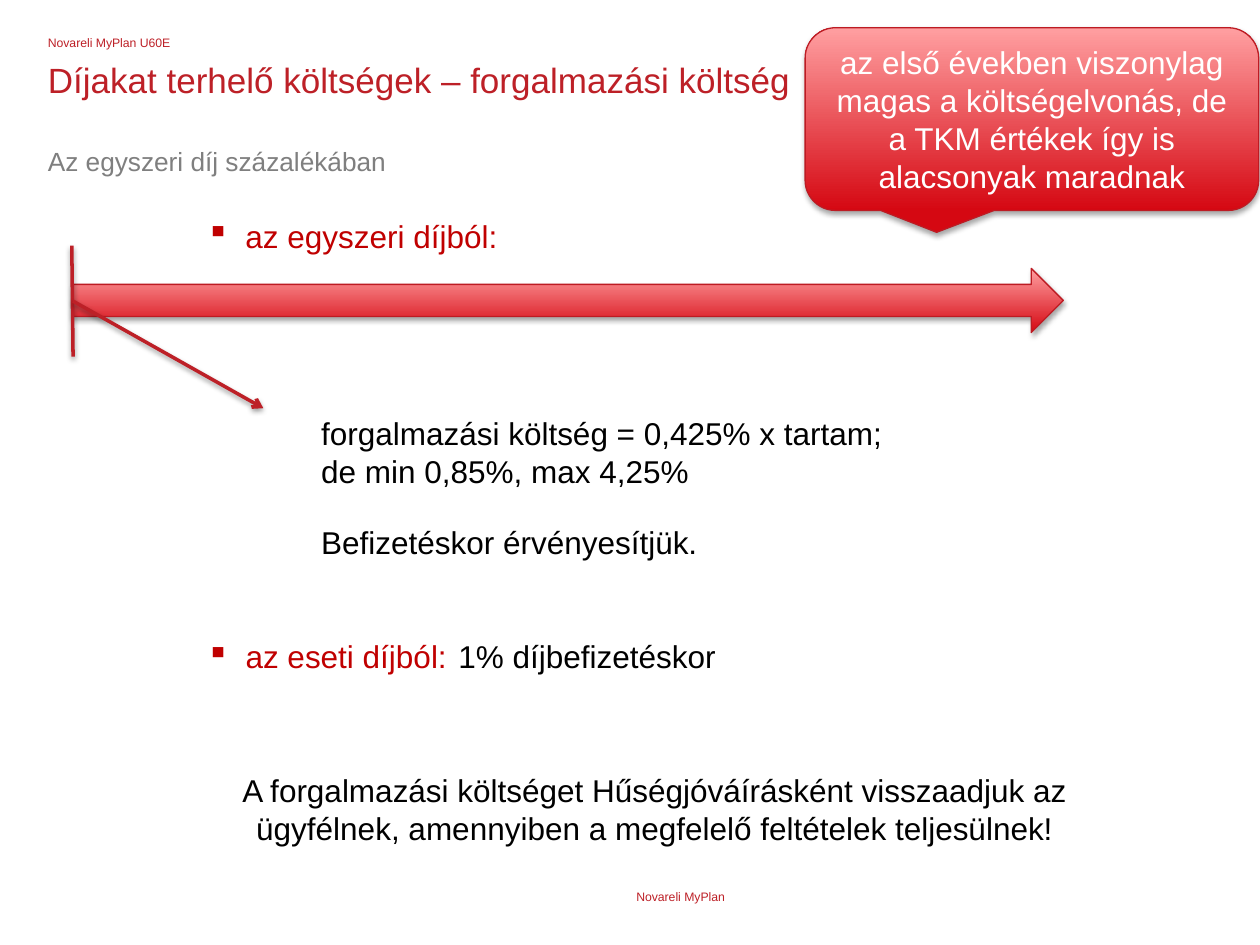
"""Build the slide on distribution costs charged against premiums."""
from dataclasses import dataclass

from lxml import etree
from pptx import Presentation
from pptx.dml.color import RGBColor
from pptx.enum.shapes import MSO_CONNECTOR, MSO_SHAPE
from pptx.enum.text import MSO_ANCHOR, PP_ALIGN
from pptx.oxml.ns import qn
from pptx.util import Inches, Pt

LEFT, CENTER = PP_ALIGN.LEFT, PP_ALIGN.CENTER
TOP, MIDDLE = MSO_ANCHOR.TOP, MSO_ANCHOR.MIDDLE
RIGHT_ARROW = MSO_SHAPE.RIGHT_ARROW
CALLOUT = MSO_SHAPE.ROUNDED_RECTANGULAR_CALLOUT
STRAIGHT = MSO_CONNECTOR.STRAIGHT
TITLE_ONLY = 5


@dataclass(frozen=True)
class Theme:
    """Colours, font and type sizes of the slide."""
    font: str = "Arial"
    brand: str = "BD2027"
    outline: str = "BD1B23"
    accent: str = "C00000"
    deep: str = "D50812"
    pale: str = "FF9FA1"
    muted: str = "7F7F7F"
    ink: str = "000000"
    white: str = "FFFFFF"
    small: int = 7
    body: int = 18
    subtitle: int = 15
    title: int = 20


THEME = Theme()


def rgb(color):
    """Turn a hex string into a colour."""
    return RGBColor.from_string(color)


def style(paragraph, size, color, align=LEFT, leading=None):
    """Set the font, alignment and line spacing of a paragraph."""
    paragraph.alignment = align
    if leading:
        paragraph.line_spacing = Pt(leading)
    paragraph.font.name = THEME.font
    paragraph.font.size = Pt(size)
    paragraph.font.color.rgb = rgb(color)


def place(shape, box):
    """Move and size a shape to a box given in inches."""
    shape.left, shape.top, shape.width, shape.height = map(Inches, box)


def fill_label(shape, text, size, color, leading=None):
    """Write one line of text in a frame without margins."""
    frame = shape.text_frame
    frame.word_wrap = True
    frame.vertical_anchor = TOP
    frame.margin_left = frame.margin_right = 0
    frame.margin_top = frame.margin_bottom = 0
    frame.text = text
    style(frame.paragraphs[0], size, color, leading=leading)


def add_label(slide, box, *label):
    """Add a text box without margins."""
    fill_label(slide.shapes.add_textbox(*map(Inches, box)), *label)


def add_text(slide, box, text, color=THEME.ink, align=LEFT):
    """Add a wrapped body text box and return its paragraph."""
    frame = slide.shapes.add_textbox(*map(Inches, box)).text_frame
    frame.word_wrap = True
    frame.text = text
    paragraph = frame.paragraphs[0]
    style(paragraph, THEME.body, color, align)
    return paragraph


def add_bullet(slide, box, heading, detail=None):
    """Add a bulleted heading, optionally followed by a detail."""
    frame = slide.shapes.add_textbox(*map(Inches, box)).text_frame
    frame.word_wrap = True
    paragraph = frame.paragraphs[0]
    properties = paragraph._p.get_or_add_pPr()
    properties.set("marL", str(Inches(0.31)))
    properties.set("indent", str(-Inches(0.31)))
    etree.SubElement(properties, qn("a:buChar"), char="▪")
    paragraph.add_run().text = heading
    style(paragraph, THEME.body, THEME.accent)
    if detail:
        run = paragraph.add_run()
        run.text = detail
        run.font.color.rgb = rgb(THEME.ink)


def add_shadow(shape, distance, opacity):
    """Give a shape or connector a soft shadow below it."""
    effects = etree.SubElement(shape._element.spPr, qn("a:effectLst"))
    shadow = etree.SubElement(
        effects, qn("a:outerShdw"), blurRad=str(Pt(3.1)),
        dist=str(Pt(distance)), dir="5400000", rotWithShape="0")
    color = etree.SubElement(shadow, qn("a:srgbClr"), val=THEME.ink)
    etree.SubElement(color, qn("a:alpha"), val=str(opacity * 1000))


def add_glossy_shape(slide, preset, box):
    """Add a preset shape with the red gradient and a shadow."""
    shape = slide.shapes.add_shape(preset, *map(Inches, box))
    shape.fill.gradient()
    shape.fill.gradient_angle = 90
    for stop, color in zip(shape.fill.gradient_stops, (THEME.deep, THEME.pale)):
        stop.color.rgb = rgb(color)
    shape.line.color.rgb = rgb(THEME.outline)
    shape.line.width = Pt(0.75)
    add_shadow(shape, 1.8, 35)
    return shape


def add_line(slide, start, end, arrow=False):
    """Add a shadowed line, optionally with an arrowhead at its end."""
    line = slide.shapes.add_connector(STRAIGHT, *map(Inches, start + end))
    line.line.color.rgb = rgb(THEME.brand)
    line.line.width = Pt(2)
    if arrow:
        etree.SubElement(line.line._get_or_add_ln(), qn("a:tailEnd"), type="arrow")
    add_shadow(line, 1.6, 38)


def add_callout(slide, box, text):
    """Add the speech bubble with centred white text."""
    bubble = add_glossy_shape(slide, CALLOUT, box)
    bubble.adjustments[0] = -0.21
    bubble.adjustments[1] = 0.62
    frame = bubble.text_frame
    frame.word_wrap = True
    frame.vertical_anchor = MIDDLE
    frame.text = text
    style(frame.paragraphs[0], THEME.body, THEME.white, CENTER)


def add_headings(slide):
    """Fill the title and add the product line, subtitle and footer."""
    title = slide.shapes.title
    place(title, (0.38, 0.49, 9.17, 0.61))
    fill_label(title, "Díjakat terhelő költségek – forgalmazási költség",
               THEME.title, THEME.brand, 22)
    add_label(slide, (0.38, 1.17, 9.17, 0.5), "Az egyszeri díj százalékában",
              THEME.subtitle, THEME.muted, 17)
    add_label(slide, (0.38, 0.3, 2.43, 0.13), "Novareli MyPlan U60E",
              THEME.small, THEME.brand, 7)
    add_label(slide, (5.05, 7.06, 3.17, 0.12), "Novareli MyPlan",
              THEME.small, THEME.brand)


def main():
    """Build and save the slide."""
    deck = Presentation()
    deck.slide_width, deck.slide_height = Inches(10), Inches(7.5)
    slide = deck.slides.add_slide(deck.slide_layouts[TITLE_ONLY])
    add_headings(slide)
    add_glossy_shape(slide, RIGHT_ARROW, (0.58, 2.13, 7.86, 0.51))
    add_line(slide, (0.57, 1.95), (0.58, 2.83))
    add_bullet(slide, (1.54, 1.67, 3.4, 0.4), "az egyszeri díjból:")
    add_bullet(slide, (1.54, 5.01, 7.31, 0.4), "az eseti díjból: ",
               "\t1% díjbefizetéskor")
    add_text(slide, (2.45, 4.1, 6.85, 0.4), "Befizetéskor érvényesítjük.")
    add_line(slide, (0.58, 2.39), (2.09, 3.24), arrow=True)
    add_text(slide, (2.45, 3.24, 4.87, 0.71),
             "forgalmazási költség = 0,425% x tartam; de min 0,85%, max 4,25%")
    add_text(slide, (1.22, 6.07, 7.95, 0.71),
             "A forgalmazási költséget Hűségjóváírásként visszaadjuk az "
             "ügyfélnek, amennyiben a megfelelő feltételek teljesülnek!",
             align=CENTER)
    add_callout(slide, (6.39, 0.22, 3.6, 1.45),
                "az első években viszonylag magas a költségelvonás, de "
                "a TKM értékek így is alacsonyak maradnak")
    deck.save("out.pptx")


if __name__ == "__main__":
    main()
